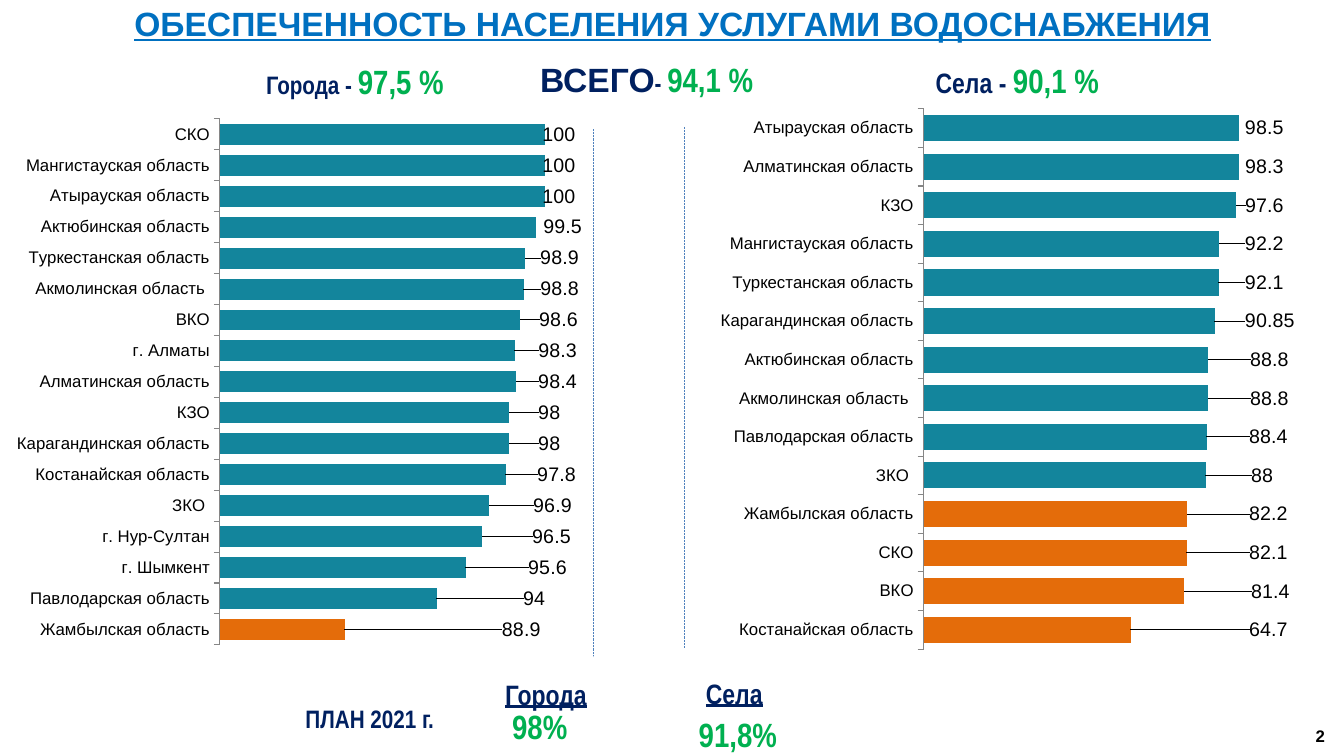
from pptx import Presentation
from pptx.chart.data import CategoryChartData
from pptx.dml.color import RGBColor
from pptx.enum.chart import XL_CHART_TYPE, XL_LABEL_POSITION, XL_TICK_MARK
from pptx.enum.dml import MSO_LINE
from pptx.enum.shapes import MSO_CONNECTOR
from pptx.enum.text import MSO_ANCHOR, MSO_AUTO_SIZE, PP_ALIGN
from pptx.oxml import parse_xml
from pptx.oxml.ns import nsdecls, qn
from pptx.util import Inches, Pt

NAVY, GREEN, TEAL, ORANGE = "002060", "00B050", "13859C", "E46C0A"
NARROW = "Arial Narrow"
LABEL_GAP = 0.05  # inches between a bar end and its label by default

# (category, value, left edge of the label in inches), from bottom to top
CITIES = [
    ("Жамбылская область", 88.9, 4.99), ("Павлодарская область", 94, 5.2),
    ("г. Шымкент", 95.6, 5.25), ("г. Нур-Султан", 96.5, 5.29),
    ("ЗКО ", 96.9, 5.3), ("Костанайская область", 97.8, 5.34),
    ("Карагандинская область", 98, 5.35), ("КЗО", 98, 5.35),
    ("Алматинская область", 98.4, 5.35), ("г. Алматы", 98.3, 5.35),
    ("ВКО", 98.6, 5.36), ("Акмолинская область ", 98.8, 5.37),
    ("Туркестанская область", 98.9, 5.37), ("Актюбинская область", 99.5, 5.4),
    ("Атырауская область", 100, 5.39), ("Мангистауская область", 100, 5.39),
    ("СКО", 100, 5.39),
]
VILLAGES = [
    ("Костанайская область", 64.7, 12.4), ("ВКО", 81.4, 12.42),
    ("СКО", 82.1, 12.4), ("Жамбылская область", 82.2, 12.4),
    ("ЗКО ", 88, 12.42), ("Павлодарская область", 88.4, 12.4),
    ("Акмолинская область ", 88.8, 12.41), ("Актюбинская область", 88.8, 12.41),
    ("Карагандинская область", 90.85, 12.36), ("Туркестанская область", 92.1, 12.36),
    ("Мангистауская область", 92.2, 12.36), ("КЗО", 97.6, 12.36),
    ("Алматинская область", 98.3, 12.36), ("Атырауская область", 98.5, 12.36),
]


def color(value):
    return RGBColor.from_string(value)


def style(font, size, name, fill, bold=False, underline=False):
    font.size, font.name = Pt(size), name
    font.bold, font.underline = bold, underline
    font.color.rgb = color(fill)


def add_text(slide, area, spans, inset=(0.13, 0.07), wrap=True):
    """Add a bold text line; each span is (text, size, font, colour, underline)."""
    box = slide.shapes.add_textbox(*map(Inches, area))
    frame = box.text_frame
    frame.word_wrap = wrap
    frame.margin_left = frame.margin_right = Inches(inset[0])
    frame.margin_top = frame.margin_bottom = Inches(inset[1])
    para = frame.paragraphs[0]
    for text, size, name, fill, underline in spans:
        span = para.add_run()
        span.text = text
        style(span.font, size, name, fill, True, underline)


def add_title(slide, text):
    title = slide.shapes.title
    title.left, title.top, title.width, title.height = map(Inches, (0.01, 0, 13.32, 0.45))
    title.fill.solid()
    title.fill.fore_color.rgb = color("FFFFFF")
    frame = title.text_frame
    frame.text = text
    frame.auto_size = MSO_AUTO_SIZE.NONE
    frame.vertical_anchor = MSO_ANCHOR.MIDDLE
    para = frame.paragraphs[0]
    para.alignment = PP_ALIGN.CENTER
    style(para.runs[0].font, 24, "Arial", "0070C0", True, True)


def add_divider(slide, x, top, bottom):
    line = slide.shapes.add_connector(
        MSO_CONNECTOR.STRAIGHT, Inches(x), Inches(top), Inches(x), Inches(bottom))
    line.line.color.rgb = color("4F81BD")
    line.line.width = Pt(0.5)
    line.line.dash_style = MSO_LINE.ROUND_DOT
    line.element.spPr.append(parse_xml(f"<a:effectLst {nsdecls('a')}/>"))


def manual_layout(x, y, size=None):
    """Build a layout: an inner plot area if a size is given, else an offset."""
    parts = []
    if size:
        parts = ['<c:layoutTarget val="inner"/>', '<c:xMode val="edge"/>', '<c:yMode val="edge"/>']
    parts += [f'<c:x val="{x:.4f}"/>', f'<c:y val="{y:.4f}"/>']
    if size:
        parts += [f'<c:w val="{size[0]:.4f}"/>', f'<c:h val="{size[1]:.4f}"/>']
    return parse_xml(f"<c:layout {nsdecls('c')}><c:manualLayout>{''.join(parts)}"
                     "</c:manualLayout></c:layout>")


def add_bars(slide, area, plot_area, rows, minimum, low_count):
    """Add a bar chart whose lowest low_count bars are orange."""
    data = CategoryChartData()
    data.categories = [row[0] for row in rows]
    data.add_series("Series 1", [row[1] for row in rows])
    chart = slide.shapes.add_chart(
        XL_CHART_TYPE.BAR_CLUSTERED, *map(Inches, area), data).chart
    chart.has_legend = chart.has_title = False
    style(chart.font, 18, "Calibri", "000000")

    # Axes
    values, categories = chart.value_axis, chart.category_axis
    values.minimum_scale, values.maximum_scale = minimum, 100
    values.has_major_gridlines = values.visible = False
    categories.major_tick_mark = XL_TICK_MARK.OUTSIDE
    categories.format.line.color.rgb = color("868686")
    style(categories.tick_labels.font, 12, "Arial", "000000")

    # Bars
    plot = chart.plots[0]
    plot.gap_width, plot.vary_by_categories = 48, False
    series = plot.series[0]
    series.format.fill.solid()
    series.format.fill.fore_color.rgb = color(TEAL)
    for index in range(low_count):
        fill = series.points[index].format.fill
        fill.solid()
        fill.fore_color.rgb = color(ORANGE)

    # Value labels, each moved to its own place
    labels = series.data_labels
    labels.show_value = True
    labels.position = XL_LABEL_POSITION.OUTSIDE_END
    style(labels.font, 14, "Arial", "000000")
    for index in range(len(rows)):
        label = series.points[index].data_label
        label.position = XL_LABEL_POSITION.OUTSIDE_END
        style(label.font, 14, "Arial", "000000")
    left, top, width, height = area
    plot_left, plot_top, plot_width, plot_height = plot_area
    for node, (_, value, label_left) in zip(chart.element.iter(qn("c:dLbl")), rows):
        bar_end = plot_left + plot_width * (value - minimum) / (100 - minimum)
        offset = (label_left - bar_end - LABEL_GAP) / width
        node.find(qn("c:idx")).addnext(manual_layout(offset, 0))

    # Plot position
    plot_node = next(chart.element.iter(qn("c:plotArea")))
    for old in plot_node.findall(qn("c:layout")):
        plot_node.remove(old)
    plot_node.insert(0, manual_layout((plot_left - left) / width, (plot_top - top) / height,
                                      (plot_width / width, plot_height / height)))


def main():
    deck = Presentation()
    deck.slide_width, deck.slide_height = Inches(13.33), Inches(7.5)
    slide = deck.slides.add_slide(deck.slide_layouts[5])
    add_title(slide, "ОБЕСПЕЧЕННОСТЬ НАСЕЛЕНИЯ УСЛУГАМИ ВОДОСНАБЖЕНИЯ")

    # Charts and the dividers between them
    add_bars(slide, (7.03, 0.98, 6.07, 5.57), (9.16, 1.08, 3.18, 5.36), VILLAGES, 0, 4)
    add_bars(slide, (0.05, 1.08, 5.83, 5.43), (2.18, 1.18, 3.23, 5.22), CITIES, 82, 1)
    add_divider(slide, 6.79, 1.26, 6.43)
    add_divider(slide, 5.89, 1.28, 6.51)

    # Current coverage
    add_text(slide, (9.15, 0.52, 4.09, 0.54), [
        ("Села - ", 20, NARROW, NAVY, False), ("90,1 %", 24, NARROW, GREEN, False)])
    add_text(slide, (2.51, 0.53, 2.77, 0.54), [
        ("Города - ", 18, NARROW, NAVY, False), ("97,5 %", 24, NARROW, GREEN, False)])
    add_text(slide, (5.26, 0.54, 2.4, 0.5), [
        ("ВСЕГО", 24, "Arial", NAVY, False), ("- ", 18, NARROW, NAVY, False),
        ("94,1 %", 24, NARROW, GREEN, False)], (0.1, 0.05))

    # Plan for 2021
    add_text(slide, (2.9, 6.91, 1.86, 0.44), [("ПЛАН 2021 г.", 18, NARROW, NAVY, False)])
    add_text(slide, (4.88, 6.65, 1.09, 0.47), [("Города", 20, NARROW, NAVY, True)])
    add_text(slide, (4.95, 6.93, 1.14, 0.54), [("98%", 24, NARROW, GREEN, False)])
    add_text(slide, (6.87, 6.64, 1.09, 0.47), [("Села", 20, NARROW, NAVY, True)])
    add_text(slide, (6.8, 7.01, 1.14, 0.54), [("91,8%", 24, NARROW, GREEN, False)])

    # Page number
    add_text(slide, (12.95, 7.15, 0.29, 0.3), [("2", 12, "Arial", "000000", False)],
             (0.1, 0.05), False)
    deck.save("out.pptx")


if __name__ == "__main__":
    main()
